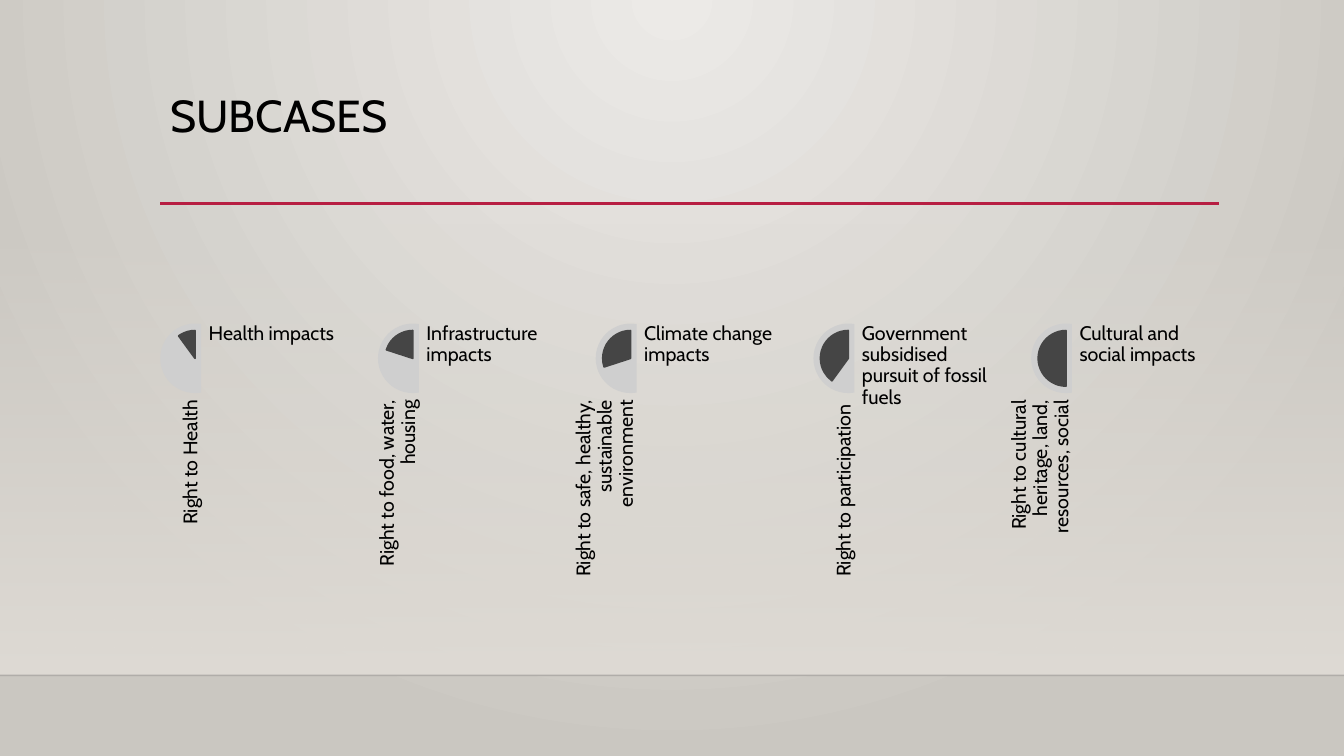
from dataclasses import dataclass

from lxml import etree
from pptx import Presentation
from pptx import util as u
from pptx.dml.color import RGBColor
from pptx.enum import shapes, text
from pptx.oxml.ns import qn


@dataclass(frozen=True)
class Theme:
    font: str = "Cabin"
    title_size: float = 32
    label_size: float = 14
    ink: str = "000000"
    accent: str = "B71E42"
    dial: str = "CFCFCF"
    wedge: str = "454545"
    glow: str = "ECEAE7"
    edge: str = "CAC7C1"
    wall: str = "DFDBD5"
    floor_line: str = "000001"


# Grid of square cells, ten to the inch
CELL = u.Inches(0.1)
COLUMNS, ROWS = 133.33, 75
LEFT, CONTENT_WIDTH = 15.9, 105
DIAL_TOP, DIAL_SIZE, WEDGE_INSET = 32.1, 6.9, 0.7
PITCH = 21.6  # columns from one subcase to the next
FULL_TURN = 216  # whole circle in adjustment units

SUBCASES = [
    ("Health impacts", "Right to Health"),
    ("Infrastructure impacts", "Right to food, water, housing"),
    ("Climate change impacts", "Right to safe, healthy, sustainable environment"),
    ("Government subsidised pursuit of fossil fuels", "Right to participation "),
    ("Cultural and social impacts", "Right to cultural heritage, land, resources, social"),
]


def cells(*counts):
    return [round(count * CELL) for count in counts]


def set_alpha(color_element, percent):
    etree.SubElement(color_element, qn("a:alpha"), val=str(percent * 1000))


class SlideBuilder:
    def __init__(self, slide, theme):
        self.slide = slide
        self.theme = theme

    def gradient(self, fill, start, end):
        fill.gradient()
        for stop, color in zip(fill.gradient_stops, (start, end)):
            stop.color.rgb = RGBColor.from_string(color)

    def background(self):
        self.gradient(self.slide.background.fill, self.theme.glow, self.theme.edge)
        glow = self.slide.element.find(".//" + qn("a:gradFill"))
        linear = glow.find(qn("a:lin"))
        radial = etree.Element(qn("a:path"), {"path": "circle"})
        etree.SubElement(radial, qn("a:fillToRect"), l="43000", t="0", r="43000", b="100000")
        glow.replace(linear, radial)

    def shape(self, kind, x, y, w, h, color=None, outline=None, adjust=()):
        item = self.slide.shapes.add_shape(kind, *cells(x, y, w, h))
        item.shadow.inherit = False
        for index, value in enumerate(adjust):
            item.adjustments[index] = value
        if color:
            item.fill.solid()
            item.fill.fore_color.rgb = RGBColor.from_string(color)
        if outline:
            item.line.color.rgb = RGBColor.from_string(outline)
            item.line.width = u.Pt(1.25)
        else:
            item.line.fill.background()
        return item

    def fading_wall(self, x, y, w, h):
        wall = self.shape(shapes.MSO_SHAPE.RECTANGLE, x, y, w, h)
        self.gradient(wall.fill, self.theme.wall, self.theme.wall)
        wall.fill.gradient_angle = 270
        set_alpha(wall.element.spPr.find(".//" + qn("a:srgbClr")), 0)

    def rule(self, x, y, w, color, width, alpha=None):
        line = self.slide.shapes.add_connector(
            shapes.MSO_CONNECTOR.STRAIGHT, *cells(x, y, x + w, y))
        line.line.color.rgb = RGBColor.from_string(color)
        line.line.width = u.Pt(width)
        if alpha is not None:
            set_alpha(line.element.spPr.find(".//" + qn("a:srgbClr")), alpha)
        etree.SubElement(line.element.spPr, qn("a:effectLst"))

    def label(self, wording, x, y, w, h, size, inset=(0, 0), rotation=0,
              anchor=text.MSO_ANCHOR.TOP, align=text.PP_ALIGN.LEFT):
        box = self.slide.shapes.add_textbox(*cells(x, y, w, h))
        box.rotation = rotation
        frame = box.text_frame
        frame.word_wrap = True
        frame.vertical_anchor = anchor
        frame.margin_left = frame.margin_right = u.Inches(inset[0])
        frame.margin_top = frame.margin_bottom = u.Inches(inset[1])
        paragraph = frame.paragraphs[0]
        paragraph.text = wording
        paragraph.alignment = align
        paragraph.line_spacing = 0.9
        paragraph.font.name = self.theme.font
        paragraph.font.size = u.Pt(size)
        paragraph.font.color.rgb = RGBColor.from_string(self.theme.ink)

    def subcase(self, index, impact, right):
        theme = self.theme
        x = LEFT + index * PITCH
        # Half dial, filled one tenth of a turn further at each subcase
        self.shape(shapes.MSO_SHAPE.CHORD, x, DIAL_TOP, DIAL_SIZE, DIAL_SIZE,
                   theme.dial, adjust=(48, 168))
        top = FULL_TURN * 3 / 4
        wedge_size = DIAL_SIZE - 2 * WEDGE_INSET
        self.shape(shapes.MSO_SHAPE.PIE, x + WEDGE_INSET, DIAL_TOP + WEDGE_INSET,
                   wedge_size, wedge_size, theme.wedge, theme.wedge,
                   (top - (index + 1) * FULL_TURN / 10, top))
        # Right affected, reading upwards, and the impact beside the dial
        self.label(right, x - 7.9, 47.6, 19.9, 4.1, theme.label_size, rotation=270,
                   anchor=text.MSO_ANCHOR.BOTTOM, align=text.PP_ALIGN.RIGHT)
        self.label(impact, x + 4.8, DIAL_TOP, 13.8, 27.5, theme.label_size)


def main():
    deck = Presentation()
    deck.slide_width, deck.slide_height = cells(COLUMNS, ROWS)
    theme = Theme()
    page = SlideBuilder(deck.slides.add_slide(deck.slide_layouts[6]), theme)

    # Backdrop
    page.background()
    page.fading_wall(0, 22.1, COLUMNS, 44.9)
    page.rule(0, 67, COLUMNS, theme.floor_line, 1, alpha=20)

    # Title
    page.rule(LEFT, 20.2, CONTENT_WIDTH, theme.accent, 2.5)
    page.label("SUBCASES", LEFT, 8.8, CONTENT_WIDTH, 11.5, theme.title_size, (0.1, 0.05))

    # Subcases
    for index, (impact, right) in enumerate(SUBCASES):
        page.subcase(index, impact, right)

    deck.save("out.pptx")


if __name__ == "__main__":
    main()
